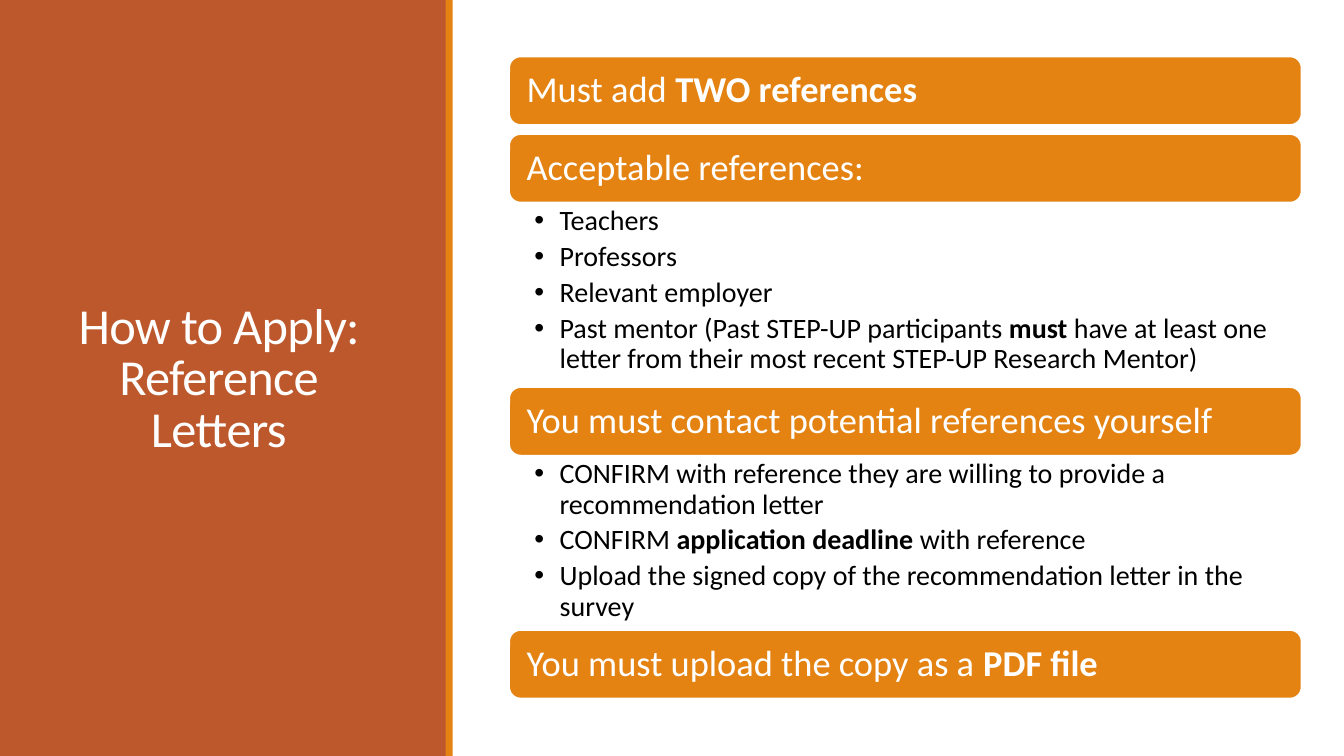
from dataclasses import dataclass

from lxml import etree
from pptx import Presentation
from pptx.dml.color import RGBColor
from pptx.enum.shapes import MSO_SHAPE
from pptx.enum.text import MSO_ANCHOR, MSO_AUTO_SIZE, PP_ALIGN
from pptx.oxml.ns import qn
from pptx.shapes.autoshape import Shape
from pptx.util import Inches, Pt

RECT, ROUNDED = MSO_SHAPE.RECTANGLE, MSO_SHAPE.ROUNDED_RECTANGLE
TOP, MIDDLE, BOTTOM = MSO_ANCHOR.TOP, MSO_ANCHOR.MIDDLE, MSO_ANCHOR.BOTTOM
LEFT, CENTER = PP_ALIGN.LEFT, PP_ALIGN.CENTER
NO_AUTOFIT = MSO_AUTO_SIZE.NONE

FONT = "Calibri"
RUST, ORANGE, WHITE, BLACK = "BD582C", "E48312", "FFFFFF", "000000"
COLUMN_LEFT, COLUMN_WIDTH = 5.05, 7.86
FIRST_TOP, BAR_HEIGHT, BAR_GAP = 0.56, 0.68, 0.09
BULLET_INDENT = 0.25


@dataclass
class Section:
    """A heading bar and the bullets under it; ** marks bold text."""
    heading: str
    bullets: tuple[str, ...] = ()
    list_height: float = BAR_GAP


SECTIONS = [
    Section("Must add **TWO references**"),
    Section("Acceptable references:", (
        "Teachers",
        "Professors",
        "Relevant employer",
        "Past mentor (Past STEP-UP participants **must **have at least one "
        "letter from their most recent STEP-UP Research Mentor)",
    ), 1.83),
    Section("You must contact potential references yourself", (
        "CONFIRM with reference they are willing to provide a recommendation letter",
        "CONFIRM **application deadline **with reference",
        "Upload the signed copy of the recommendation letter in the survey",
    ), 1.73),
    Section("You must upload the copy as a **PDF file**"),
]


def rgb(color: str) -> RGBColor:
    return RGBColor.from_string(color)


def place(shape: Shape, left: float, top: float, width: float, height: float) -> None:
    shape.left, shape.top = Inches(left), Inches(top)
    shape.width, shape.height = Inches(width), Inches(height)


def add_block(shapes, kind, left: float, top: float, width: float, height: float,
              fill: str, outline: str | None = None) -> Shape:
    block = shapes.add_shape(kind, Inches(left), Inches(top), Inches(width), Inches(height))
    block.shadow.inherit = False
    block.fill.solid()
    block.fill.fore_color.rgb = rgb(fill)
    if outline:
        block.line.color.rgb = rgb(outline)
        block.line.width = Pt(1.25)
    else:
        block.line.fill.background()
    return block


def write(shape: Shape, *lines: str, size: float, color: str, anchor=TOP, align=LEFT,
          insets: tuple[float, ...] = (0.1, 0.05, 0.1, 0.05), line_spacing: float = 0.9,
          space_after: float = 0, bullet: bool = False, tracking: float = 0) -> None:
    frame = shape.text_frame
    frame.word_wrap = True
    frame.auto_size = NO_AUTOFIT
    frame.vertical_anchor = anchor
    (frame.margin_left, frame.margin_top,
     frame.margin_right, frame.margin_bottom) = map(Inches, insets)
    for number, line in enumerate(lines):
        paragraph = frame.add_paragraph() if number else frame.paragraphs[0]
        paragraph.alignment = align
        paragraph.line_spacing = line_spacing
        paragraph.space_before = Pt(0)
        paragraph.space_after = Pt(space_after)
        if bullet:
            properties = paragraph._p.get_or_add_pPr()
            properties.set("marL", str(Inches(BULLET_INDENT)))
            properties.set("indent", str(-Inches(BULLET_INDENT)))
            etree.SubElement(properties, qn("a:buChar")).set("char", "•")
        for part, words in enumerate(line.split("**")):
            if not words:
                continue
            run = paragraph.add_run()
            run.text = words
            run.font.name = FONT
            run.font.size = Pt(size)
            run.font.bold = part % 2 == 1
            run.font.color.rgb = rgb(color)
            if tracking:
                run._r.get_or_add_rPr().set("spc", str(round(tracking * 100)))


def main() -> None:
    deck = Presentation()
    deck.slide_width, deck.slide_height = Inches(13.33), Inches(7.5)
    slide = deck.slides.add_slide(deck.slide_layouts[3])
    title, *lists = slide.placeholders

    # Side panel, behind the title
    for left, width, fill in ((0, 4.43, RUST), (4.42, 0.07, ORANGE)):
        panel = add_block(slide.shapes, RECT, left, 0, width, 7.5, fill)
        title._element.addprevious(panel._element)

    # Title
    place(title, 0.42, 2.09, 3.5, 2.5)
    write(title, "How to Apply: Reference Letters", size=36, color=WHITE, anchor=BOTTOM,
          align=CENTER, line_spacing=0.85, tracking=-0.5)

    # Heading bars with their lists, stacked downwards
    free_lists = iter(lists)
    top = FIRST_TOP
    for section in SECTIONS:
        bar = add_block(slide.shapes, ROUNDED, COLUMN_LEFT, top, COLUMN_WIDTH, BAR_HEIGHT,
                        ORANGE, WHITE)
        write(bar, section.heading, size=26, color=WHITE, anchor=MIDDLE,
              insets=(0.14, 0.11, 0.14, 0.11))
        top += BAR_HEIGHT
        if section.bullets:
            bullets = next(free_lists)
            place(bullets, COLUMN_LEFT, top, COLUMN_WIDTH, section.list_height)
            write(bullets, *section.bullets, size=20, color=BLACK, bullet=True,
                  insets=(0.25, 0.04, 0.2, 0.04), space_after=4)
        top += section.list_height

    deck.save("out.pptx")


if __name__ == "__main__":
    main()
